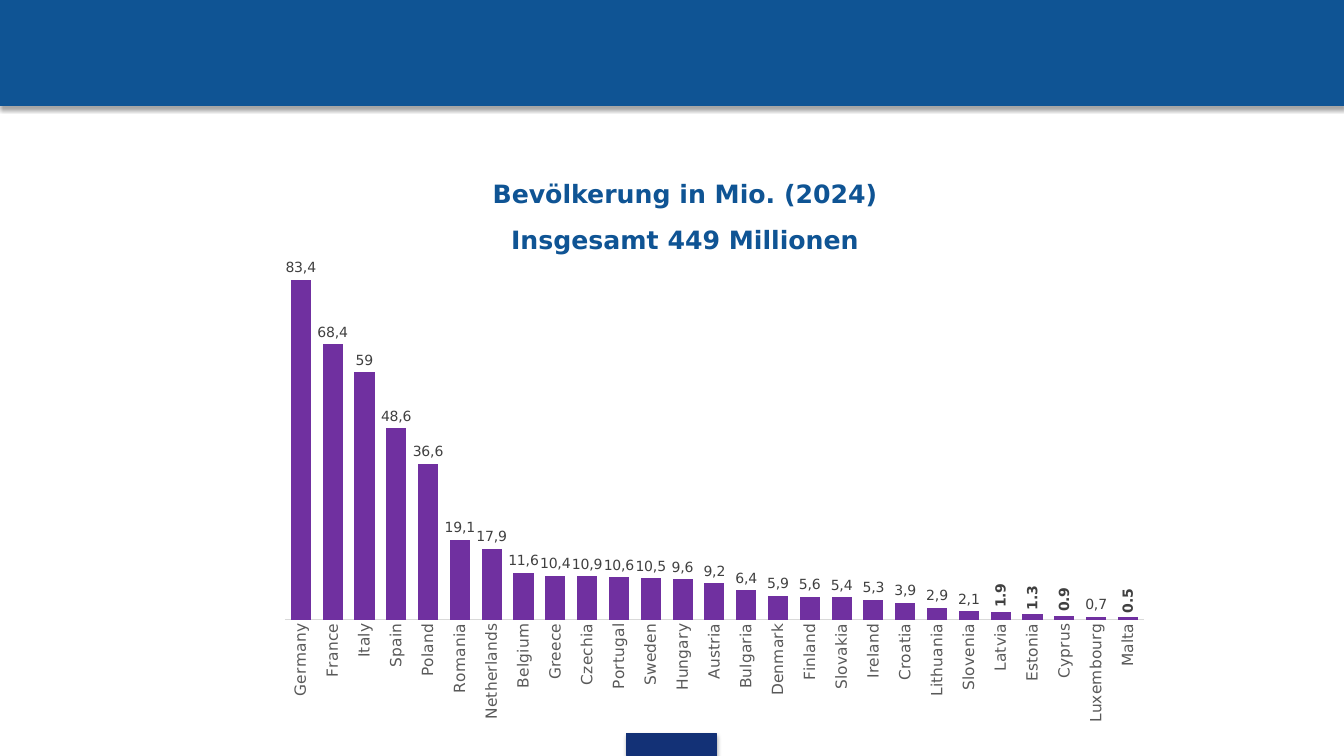
"""Build a slide with a column chart of the population of the EU countries."""
from dataclasses import dataclass

from lxml import etree
from pptx import Presentation
from pptx.chart.data import CategoryChartData
from pptx.dml.color import RGBColor
from pptx.enum.chart import XL_CHART_TYPE as ChartType, XL_LABEL_POSITION as LabelPosition, XL_TICK_MARK as TickMark
from pptx.enum.shapes import MSO_SHAPE as Preset
from pptx.enum.text import MSO_ANCHOR as Anchor, MSO_AUTO_SIZE as AutoSize, PP_ALIGN as Align
from pptx.oxml import parse_xml
from pptx.oxml.ns import nsdecls
from pptx.util import Pt

TITLE_LINES = ("Bevölkerung in Mio. (2024)", "Insgesamt 449 Millionen")
POPULATION = [
    ("Germany", 82.9, "83,4"), ("France", 67.2, "68,4"), ("Italy", 60.4, "59"),
    ("Spain", 46.7, "48,6"), ("Poland", 38, "36,6"), ("Romania", 19.5, "19,1"),
    ("Netherlands", 17.2, "17,9"), ("Belgium", 11.4, "11,6"), ("Greece", 10.7, "10,4"),
    ("Czechia", 10.6, "10,9"), ("Portugal", 10.3, "10,6"), ("Sweden", 10.1, "10,5"),
    ("Hungary", 9.8, "9,6"), ("Austria", 8.8, "9,2"), ("Bulgaria", 7.1, "6,4"),
    ("Denmark", 5.8, "5,9"), ("Finland", 5.5, "5,6"), ("Slovakia", 5.4, "5,4"),
    ("Ireland", 4.8, "5,3"), ("Croatia", 4.1, "3,9"), ("Lithuania", 2.8, "2,9"),
    ("Slovenia", 2, "2,1"), ("Latvia", 1.9, None), ("Estonia", 1.3, None),
    ("Cyprus", 0.9, None), ("Luxembourg", 0.6, "0,7"), ("Malta", 0.5, None),
]
SLIDE_SIZE = (1344, 756)
TITLE_BOX = (251, 163, 868, 92)
CHART_BOX = (267, 241, 894, 493)
PLOT_BOX = (285, 251, 859, 369)
AXIS_MAXIMUM = 90
EMU_PER_PX = 914400 / 100.8


@dataclass(frozen=True)
class Theme:
    """Colours, font and type sizes of the slide."""
    blue: str = "0F5494"
    navy: str = "133176"
    purple: str = "7030A0"
    axis_text: str = "595959"
    axis_line: str = "D9D9D9"
    label_text: str = "404040"
    font: str = "DejaVu Sans"
    title_size: int = 18
    axis_size: int = 11
    label_size: int = 10


THEME = Theme()
BARS = [((0, 0, 1344, 106), THEME.blue), ((627, 734, 90, 22), THEME.navy)]


def px(*lengths):
    """Turn pixel lengths into EMU."""
    return [round(length * EMU_PER_PX) for length in lengths]


def set_font(font, size, color, bold=False):
    """Apply the theme font with a size, colour and weight."""
    for name, value in {"name": THEME.font, "size": Pt(size), "bold": bold}.items():
        setattr(font, name, value)
    font.color.rgb = RGBColor.from_string(color)


def add_bar(slide, box, color):
    """Add a coloured band with a soft shadow below it."""
    shape = slide.shapes.add_shape(Preset.RECTANGLE, *px(*box))
    shape.fill.solid()
    shape.fill.fore_color.rgb = RGBColor.from_string(color)
    shape.line.color.rgb = RGBColor.from_string(color)
    shape.line.width = Pt(0.75)
    shape.shadow.inherit = False
    effects = shape.element.spPr.xpath("a:effectLst")[0]
    effects.append(parse_xml(
        f'<a:outerShdw {nsdecls("a")} blurRad="{Pt(3.1)}" dist="{Pt(1.8)}" dir="5400000" rotWithShape="0">'
        '<a:srgbClr val="000000"><a:alpha val="35000"/></a:srgbClr></a:outerShdw>'))


def fill_title(title):
    """Place and format the slide title."""
    title.left, title.top, title.width, title.height = px(*TITLE_BOX)
    frame = title.text_frame
    frame.text = "\v".join(TITLE_LINES)
    settings = {"auto_size": AutoSize.NONE, "word_wrap": True, "vertical_anchor": Anchor.MIDDLE,
                "margin_top": 0, "margin_bottom": 0}
    for name, value in settings.items():
        setattr(frame, name, value)
    paragraph = frame.paragraphs[0]
    paragraph.alignment = Align.CENTER
    paragraph.line_spacing = 1.5
    for run in paragraph.runs:
        set_font(run.font, THEME.title_size, THEME.blue, True)


def place_plot(chart):
    """Fix the inner plot area inside the chart frame."""
    left, top, width, height = CHART_BOX
    plot_left, plot_top, plot_width, plot_height = PLOT_BOX
    shares = {"x": (plot_left - left) / width, "y": (plot_top - top) / height,
              "w": plot_width / width, "h": plot_height / height}
    area = chart.element.xpath("//c:plotArea")[0]
    for old_layout in area.xpath("c:layout"):
        area.remove(old_layout)
    layout = parse_xml(f'<c:layout {nsdecls("c")}><c:manualLayout/></c:layout>')
    tags = {"layoutTarget": "inner", "xMode": "edge", "yMode": "edge"}
    tags.update({name: f"{share:.3f}" for name, share in shares.items()})
    namespace = etree.QName(layout).namespace
    for name, value in tags.items():
        etree.SubElement(layout[0], f"{{{namespace}}}{name}").set("val", value)
    area.insert(0, layout)


def add_labels(series):
    """Show upright values, replaced by level written labels where given."""
    labels = series.data_labels
    labels.show_value = True
    labels.position = LabelPosition.OUTSIDE_END
    set_font(labels.font, THEME.label_size, THEME.label_text, True)
    for index, (_, _, text) in enumerate(POPULATION):
        if text is None:
            continue
        label = series.points[index].data_label
        frame = label.text_frame
        frame.text = text
        frame.word_wrap = False
        set_font(frame.paragraphs[0].runs[0].font, THEME.label_size, THEME.label_text)
        label.position = LabelPosition.OUTSIDE_END


def add_population_chart(slide):
    """Add the column chart of all countries."""
    names, values, _ = zip(*POPULATION)
    data = CategoryChartData()
    data.categories = names
    data.add_series("Series 1", values)
    chart = slide.shapes.add_chart(ChartType.COLUMN_CLUSTERED, *px(*CHART_BOX), data).chart
    chart.has_title = chart.has_legend = False
    set_font(chart.font, THEME.label_size, THEME.label_text)
    place_plot(chart)

    plot = chart.plots[0]
    for name, value in {"gap_width": 58, "overlap": -27, "vary_by_categories": False}.items():
        setattr(plot, name, value)
    series = plot.series[0]
    series.format.fill.solid()
    series.format.fill.fore_color.rgb = RGBColor.from_string(THEME.purple)
    add_labels(series)

    value_axis = chart.value_axis
    for name, value in {"minimum_scale": 0, "maximum_scale": AXIS_MAXIMUM,
                        "has_major_gridlines": False, "visible": False}.items():
        setattr(value_axis, name, value)
    category_axis = chart.category_axis
    category_axis.major_tick_mark = category_axis.minor_tick_mark = TickMark.NONE
    category_axis.format.line.color.rgb = RGBColor.from_string(THEME.axis_line)
    category_axis.format.line.width = Pt(0.75)
    set_font(category_axis.tick_labels.font, THEME.axis_size, THEME.axis_text)

    rotations = {"//c:catAx/c:txPr/a:bodyPr": -5400000, "//c:ser/c:dLbls/c:txPr/a:bodyPr": -5400000,
                 "//c:dLbl//a:bodyPr": 0}
    for query, rotation in rotations.items():
        for body in chart.element.xpath(query):
            body.set("rot", str(rotation))
            body.set("vert", "horz")


def main():
    """Build and save the presentation."""
    presentation = Presentation()
    presentation.slide_width, presentation.slide_height = px(*SLIDE_SIZE)
    slide = presentation.slides.add_slide(presentation.slide_layouts[5])
    for box, color in BARS:
        add_bar(slide, box, color)
    fill_title(slide.shapes.title)
    add_population_chart(slide)
    presentation.save("out.pptx")


if __name__ == "__main__":
    main()
